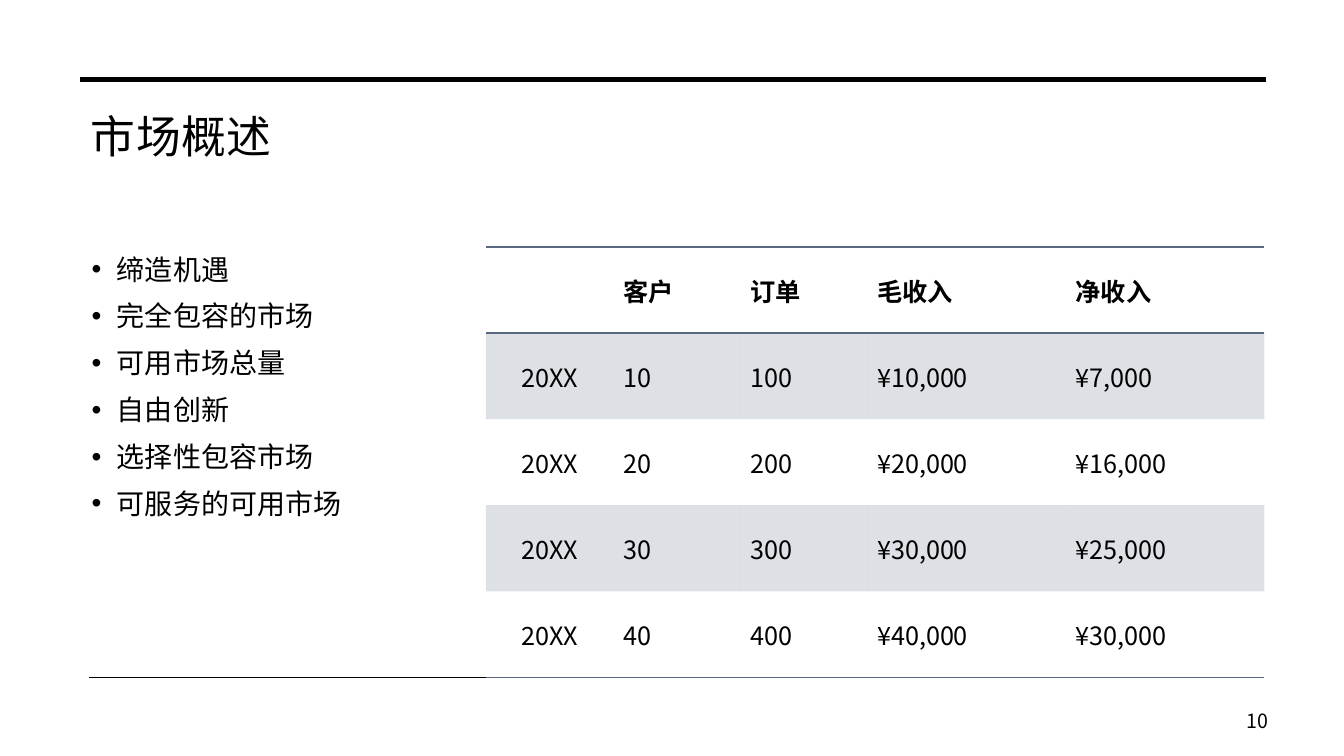
import lxml.etree
import pptx
import pptx.dml.color
import pptx.enum.shapes
import pptx.enum.text
import pptx.oxml.ns
import pptx.util

PX = 9144
THEME = {
    "font": "Noto Sans CJK SC",
    "ink": pptx.dml.color.RGBColor.from_string("000000"),
    "slate": pptx.dml.color.RGBColor.from_string("596781"),
    "title": 32,
    "list": 20,
    "table": 18,
    "number": 14,
}
ANCHOR = pptx.enum.text.MSO_ANCHOR
ALIGN = pptx.enum.text.PP_ALIGN
qn = pptx.oxml.ns.qn


def write(paragraph, text, size, bold=False, **layout):
    run = paragraph.add_run()
    run.text = text
    look = {"name": THEME["font"], "size": pptx.util.Pt(THEME[size]), "bold": bold}
    for key, value in look.items():
        setattr(run.font, key, value)
    run.font.color.rgb = THEME["ink"]
    lxml.etree.SubElement(run.font._element, qn("a:ea")).set("typeface", THEME["font"])
    for key, value in layout.items():
        setattr(paragraph, key, value)
    return run


def place(shape, left, top, width, height, anchor):
    box = {"left": left, "top": top, "width": width, "height": height}
    for key, value in box.items():
        setattr(shape, key, value * PX)
    frame = shape.text_frame
    settings = {"word_wrap": True, "vertical_anchor": anchor,
                "auto_size": pptx.enum.text.MSO_AUTO_SIZE.NONE}
    for key, value in settings.items():
        setattr(frame, key, value)
    return frame.paragraphs[0]


deck = pptx.Presentation()
deck.slide_width = 1333 * PX
deck.slide_height = 750 * PX
slide = deck.slides.add_slide(deck.slide_layouts[1])

heading = place(slide.shapes.title, 80, 109, 1173, 130, ANCHOR.TOP)
heading_run = write(heading, "市场概述", "title", alignment=ALIGN.LEFT, line_spacing=0.9)
heading_run.font._element.set("spc", "30")

market_points = ["缔造机遇", "完全包容的市场", "可用市场总量", "自由创新", "选择性包容市场", "可服务的可用市场"]
market_list = slide.placeholders[1]
point = place(market_list, 81, 245, 358, 427, ANCHOR.TOP)
for index, text in enumerate(market_points):
    if index:
        point = market_list.text_frame.add_paragraph()
    write(point, text, "list", line_spacing=1.0,
          space_before=pptx.util.Pt(0), space_after=pptx.util.Pt(9.5))
    indents = point._p.get_or_add_pPr()
    indents.set("marL", str(25 * PX))
    indents.set("indent", str(-25 * PX))

for start, end, level, weight in [(88, 1246, 79, 3.5), (88, 1246, 672, 1), (79, 1256, 79, 3.5)]:
    rule = slide.shapes.add_connector(
        pptx.enum.shapes.MSO_CONNECTOR.STRAIGHT, start * PX, level * PX, end * PX, level * PX)
    rule.line.color.rgb = THEME["ink"]
    rule.line.width = pptx.util.Pt(weight)
    lxml.etree.SubElement(rule._element.spPr, qn("a:effectLst"))

revenue = [
    ["", "客户", "订单", "毛收入", "净收入"],
    ["20XX", "10", "100", "¥10,000", "¥7,000"],
    ["20XX", "20", "200", "¥20,000", "¥16,000"],
    ["20XX", "30", "300", "¥30,000", "¥25,000"],
    ["20XX", "40", "400", "¥40,000", "¥30,000"],
]
revenue_frame = slide.shapes.add_table(5, 5, 482 * PX, 245 * PX, 772 * PX, 427 * PX)
revenue_table = revenue_frame.table
revenue_table.first_row = False
revenue_table.horz_banding = False
for style in revenue_frame._element.iter(qn("a:tableStyleId")):
    style.text = "{2D5ABB26-0587-4C30-8999-92F81FD0307C}"
for column, width in zip(revenue_table.columns, [126, 126, 126, 197, 197]):
    column.width = width * PX

edges_by_row = {0: ["a:lnT", "a:lnB"], 4: ["a:lnB"]}
for r, values in enumerate(revenue):
    revenue_table.rows[r].height = 427 * PX // 5
    for c, value in enumerate(values):
        cell = revenue_table.cell(r, c)
        cell.vertical_anchor = ANCHOR.MIDDLE
        if value:
            write(cell.text_frame.paragraphs[0], value, "table", bold=r == 0,
                  alignment=ALIGN.LEFT if c else ALIGN.CENTER)
        properties = cell._tc.get_or_add_tcPr()
        for edge in edges_by_row.get(r, []):
            border = lxml.etree.SubElement(properties, qn(edge), w=str(pptx.util.Pt(1)))
            paint = lxml.etree.SubElement(border, qn("a:solidFill"))
            lxml.etree.SubElement(paint, qn("a:srgbClr"), val=str(THEME["slate"]))
        if r % 2:
            cell.fill.solid()
            cell.fill.fore_color.rgb = THEME["slate"]
            tint = properties.find(qn("a:solidFill")).find(qn("a:srgbClr"))
            lxml.etree.SubElement(tint, qn("a:alpha"), val="20000")
        else:
            cell.fill.background()

page_number = slide.shapes.add_textbox(0, 0, PX, PX)
write(place(page_number, 1194, 695, 74, 40, ANCHOR.MIDDLE), "10", "number", alignment=ALIGN.RIGHT)

deck.save("out.pptx")
